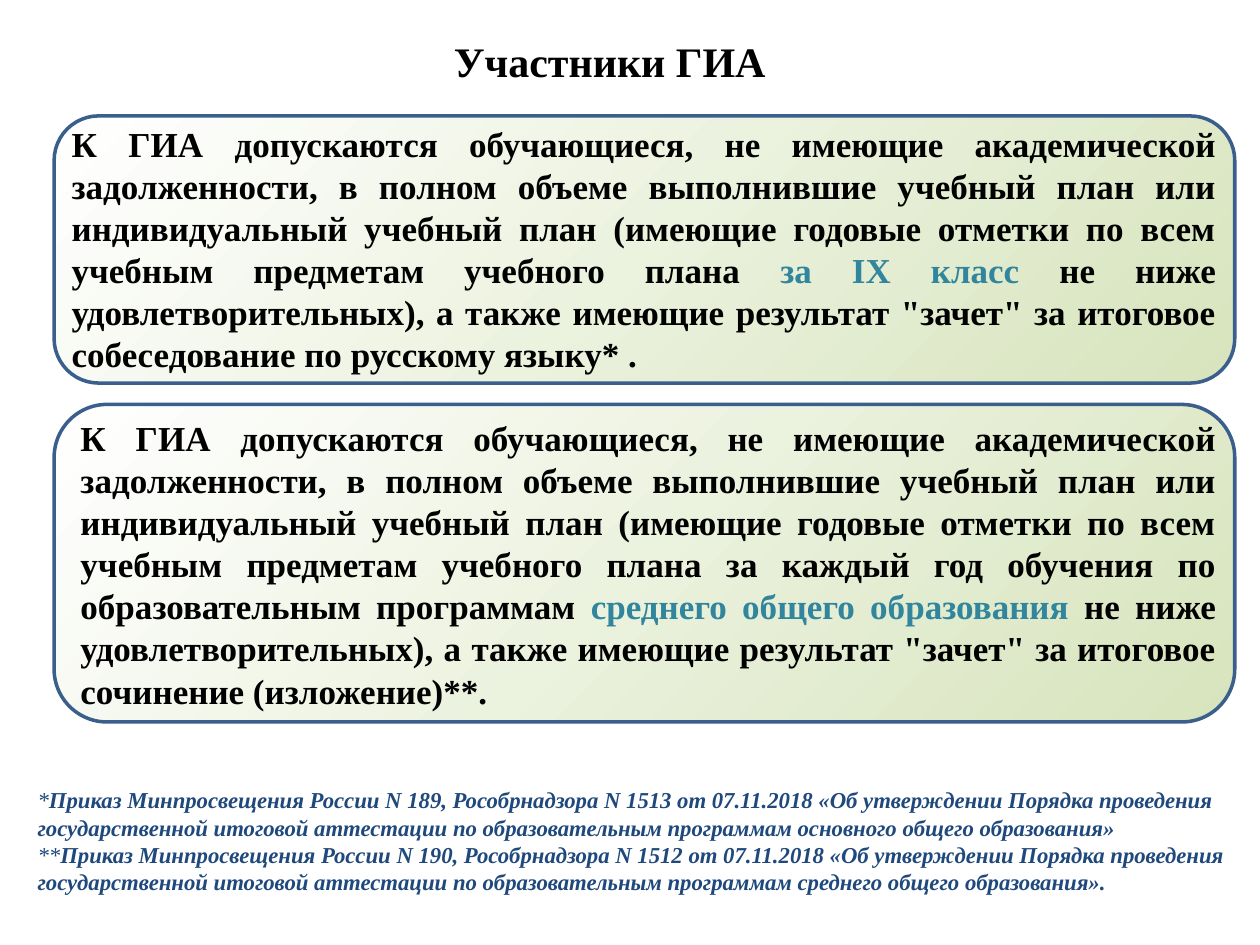
from pptx import Presentation
from pptx.dml.color import RGBColor
from pptx.enum.shapes import MSO_SHAPE as Shape
from pptx.enum.text import MSO_AUTO_SIZE as AutoSize, PP_ALIGN as Align
from pptx.util import Inches, Pt

FONT = "Times New Roman"
COLORS = {
    "text": "000000",
    "accent": "31859C",
    "note": "1F497D",
    "border": "3A5F8C",
    "green": "D7E4BD",
    "white": "FFFFFF",
}

# Content: every paragraph is a list of (text, style) runs
TITLE = [[("Участники ГИА", "title")]]
ADMISSION = (
    "К ГИА допускаются обучающиеся, не имеющие академической задолженности, "
    "в полном объеме выполнившие учебный план или индивидуальный учебный план "
    "(имеющие годовые отметки по всем учебным предметам учебного плана "
)
RESULT = 'не ниже удовлетворительных), а также имеющие результат "зачет" за итоговое '
GRADE_9 = [[
    (ADMISSION, "body"),
    ("за IX класс ", "accent"),
    (RESULT + "собеседование по русскому языку* .", "body"),
]]
GRADE_11 = [[
    (ADMISSION + "за каждый год обучения по образовательным программам ", "body"),
    ("среднего общего образования ", "accent"),
    (RESULT + "сочинение (изложение)**.", "body"),
]]
ORDER = (
    "Приказ Минпросвещения России N {}, Рособрнадзора N {} от 07.11.2018 "
    "«Об утверждении Порядка проведения государственной итоговой аттестации "
    "по образовательным программам {} общего образования»{}"
)
ORDERS = [
    ("*", 189, 1513, "основного", ""),
    ("**", 190, 1512, "среднего", "."),
]
NOTES = [[(mark, "mark"), (ORDER.format(*details), "note")] for mark, *details in ORDERS]

STYLES = {
    "title": {"size": Pt(24), "bold": True, "color": "text"},
    "body": {"size": Pt(20), "bold": True, "color": "text"},
    "accent": {"size": Pt(20), "bold": True, "color": "accent"},
    "mark": {"size": Pt(13), "bold": False, "italic": True, "color": "note"},
    "note": {"size": Pt(13), "bold": True, "italic": True, "color": "note"},
}

# Places: left, top, width, height in inches
PANELS = [(0.43, 0.92, 9.37, 2.12), (0.43, 3.21, 9.37, 2.52)]
TEXTS = [
    (TITLE, (1.77, 0.23, 6.14, 0.5), Align.CENTER),
    (GRADE_9, (0.47, 0.92, 9.28, 2.1), Align.JUSTIFY),
    (GRADE_11, (0.54, 3.26, 9.21, 2.43), Align.JUSTIFY),
    (NOTES, (0.2, 6.19, 10.28, 0.96), Align.LEFT),
]


def rgb(name):
    return RGBColor.from_string(COLORS[name])


def add_panel(slide, place):
    panel = slide.shapes.add_shape(Shape.ROUNDED_RECTANGLE, *map(Inches, place))
    panel.shadow.inherit = False
    panel.line.color.rgb = rgb("border")
    panel.line.width = Pt(2)
    panel.fill.gradient()
    panel.fill.gradient_angle = 135
    for stop, color, position in zip(panel.fill.gradient_stops, ("green", "white"), (0, 1)):
        stop.color.rgb = rgb(color)
        stop.position = position


def add_text(slide, paragraphs, place, align):
    frame = slide.shapes.add_textbox(*map(Inches, place)).text_frame
    frame.word_wrap = True
    frame.auto_size = AutoSize.SHAPE_TO_FIT_TEXT
    for index, runs in enumerate(paragraphs):
        paragraph = frame.add_paragraph() if index else frame.paragraphs[0]
        paragraph.alignment = align
        for text, style in runs:
            run = paragraph.add_run()
            run.text = text
            run.font.name = FONT
            for attribute, value in STYLES[style].items():
                if attribute == "color":
                    run.font.color.rgb = rgb(value)
                else:
                    setattr(run.font, attribute, value)


def main():
    deck = Presentation()
    deck.slide_width, deck.slide_height = Inches(10), Inches(7.5)
    slide = deck.slides.add_slide(deck.slide_layouts[6])

    # Rounded panels lie behind the text
    for place in PANELS:
        add_panel(slide, place)

    # Title, admission rules and footnotes
    for paragraphs, place, align in TEXTS:
        add_text(slide, paragraphs, place, align)

    deck.save("out.pptx")


if __name__ == "__main__":
    main()
